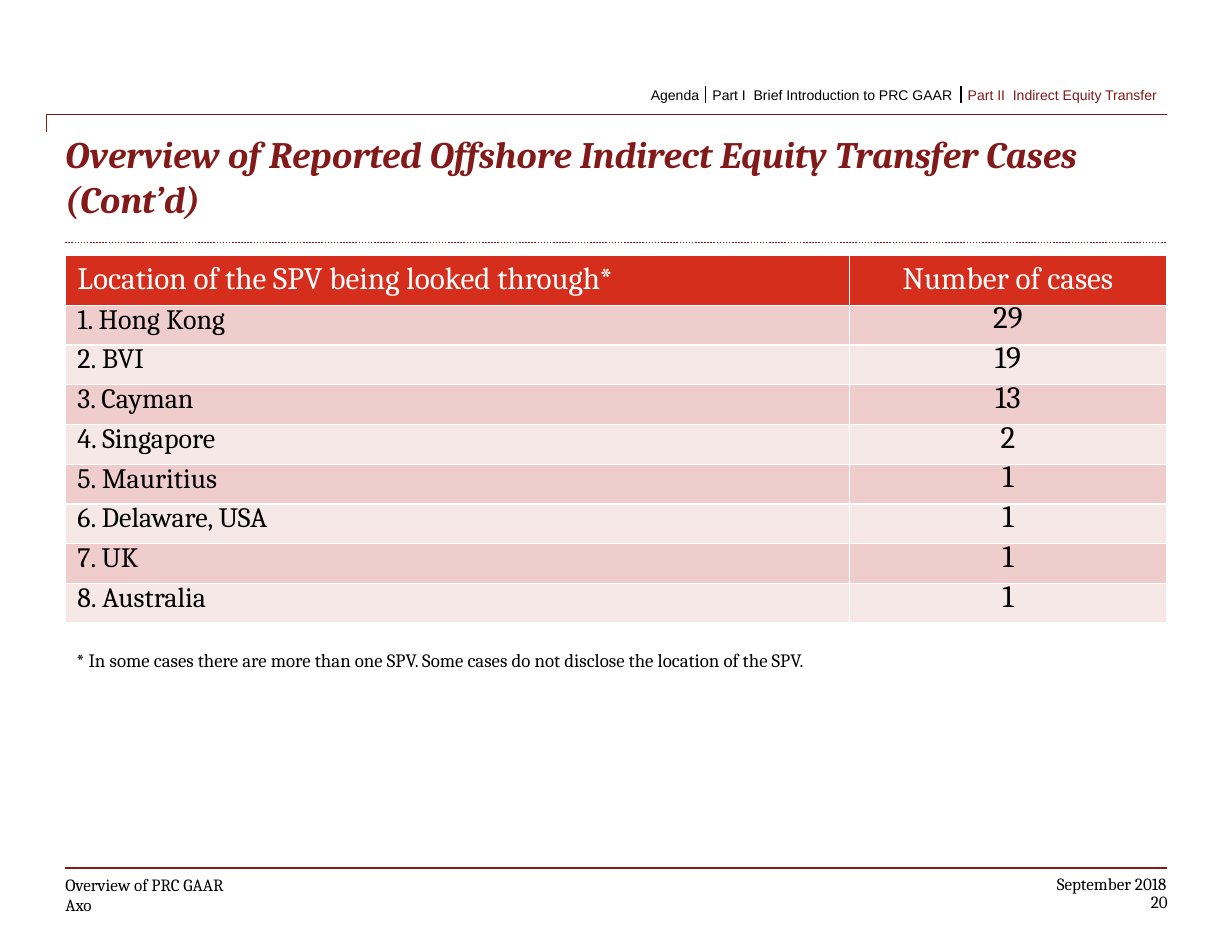
from pptx import Presentation
from pptx.dml.color import RGBColor
from pptx.enum.dml import MSO_LINE
from pptx.enum.shapes import MSO_CONNECTOR
from pptx.enum.text import MSO_ANCHOR as ANCHOR, PP_ALIGN as ALIGN
from pptx.oxml import parse_xml
from pptx.oxml.ns import nsdecls
from pptx.util import Pt
from lxml.etree import SubElement
from pptx.oxml.ns import qn

MAROON = RGBColor(0x82, 0x1A, 0x1A)
RED = RGBColor(0xD6, 0x2E, 0x1C)
PINK = RGBColor(0xF0, 0xCD, 0xCD)
PALE = RGBColor(0xF7, 0xE8, 0xE8)
BLACK = RGBColor(0, 0, 0)
WHITE = RGBColor(0xFF, 0xFF, 0xFF)

# Content
TITLE = "Overview of Reported Offshore Indirect Equity Transfer Cases (Cont’d)"
HEADER = ("Location of the SPV being looked through*", "Number of cases")
CASES = [
    ("1. Hong Kong", 29),
    ("2. BVI", 19),
    ("3. Cayman", 13),
    ("4. Singapore", 2),
    ("5. Mauritius", 1),
    ("6. Delaware, USA", 1),
    ("7. UK", 1),
    ("8. Australia", 1),
]
FOOTNOTE = ("* In some cases there are more than one SPV. "
            "Some cases do not disclose the location of the SPV.")
# Navigation: text, left, width, colour
NAV = [
    ("Agenda", 416.2, 36, BLACK),
    ("Part I  Brief Introduction to PRC GAAR", 455.8, 160, BLACK),
    ("Part II  Indirect Equity Transfer", 619.9, 130.3, MAROON),
]
# Footer: text, left, top, width, height, format
FOOTER = [
    ("Overview of PRC GAAR", 42, 561.6, 228, 13.7, dict(anchor=ANCHOR.BOTTOM)),
    ("Axo", 42, 578.2, 22, 10, dict(spacing=10, wrap=False)),
    ("September 2018", 670, 561.6, 80, 13.7, dict(align=ALIGN.RIGHT, wrap=False)),
    ("20", 725.8, 576, 25, 12.2, dict(align=ALIGN.RIGHT, spacing=10, wrap=False)),
]
LEFT, RIGHT = 42, 750
NAV_TOP, NAV_H = 55.4, 10.8


def write(tf, text, size=11, font="Cambria", color=BLACK, bold=False, italic=False,
          align=ALIGN.LEFT, spacing=None):
    p = tf.paragraphs[0]
    p.alignment = align
    if spacing:
        p.line_spacing = Pt(spacing)
    r = p.add_run()
    r.text = text
    r.font.size, r.font.name = Pt(size), font
    r.font.bold, r.font.italic = bold, italic
    r.font.color.rgb = color


def add_text(s, text, x, y, w, h, inset=(0, 0), wrap=True, anchor=ANCHOR.TOP, **fmt):
    tf = s.shapes.add_textbox(Pt(x), Pt(y), Pt(w), Pt(h)).text_frame
    tf.word_wrap = wrap
    tf.vertical_anchor = anchor
    tf.margin_left = tf.margin_right = Pt(inset[0])
    tf.margin_top = tf.margin_bottom = Pt(inset[1])
    write(tf, text, **fmt)


def add_line(s, x1, y1, x2, y2, color, width=0.75, dash=None):
    line = s.shapes.add_connector(MSO_CONNECTOR.STRAIGHT, Pt(x1), Pt(y1), Pt(x2), Pt(y2))
    line.line.color.rgb = color
    line.line.width = Pt(width)
    if dash:
        line.line.dash_style = dash
    SubElement(line._element.spPr, qn("a:effectLst"))


def fill_cell(cell, text, fill, **fmt):
    cell.margin_left = cell.margin_right = Pt(7.8)
    cell.margin_top = cell.margin_bottom = Pt(4)
    write(cell.text_frame, text, **fmt)
    tc_pr = cell._tc.get_or_add_tcPr()
    for side in ("lnL", "lnR", "lnT", "lnB"):
        tc_pr.append(parse_xml(
            f'<a:{side} {nsdecls("a")} w="12700"><a:solidFill>'
            f'<a:srgbClr val="{WHITE}"/></a:solidFill></a:{side}>'))
    cell.fill.solid()
    cell.fill.fore_color.rgb = fill


def add_case_table(s):
    widths, header_h, row_h = (504, 204), 31.5, 25.55
    n = len(CASES)
    table = s.shapes.add_table(n + 1, 2, Pt(LEFT), Pt(164.2), Pt(sum(widths)),
                               Pt(header_h + n * row_h)).table
    for col, width in zip(table.columns, widths):
        col.width = Pt(width)
    for i, row in enumerate(table.rows):
        row.height = Pt(row_h if i else header_h)
    for j, (text, align) in enumerate(zip(HEADER, (ALIGN.LEFT, ALIGN.CENTER))):
        fill_cell(table.cell(0, j), text, RED, size=20, color=WHITE, align=align)
    for i, (place, count) in enumerate(CASES, 1):
        fill = PINK if i % 2 else PALE
        fill_cell(table.cell(i, 0), place, fill, size=18, spacing=16)
        number = table.cell(i, 1)
        fill_cell(number, str(count), fill, size=20, align=ALIGN.CENTER, spacing=15)
        number.vertical_anchor = ANCHOR.MIDDLE


def main():
    prs = Presentation()
    prs.slide_width, prs.slide_height = Pt(792), Pt(612)
    s = prs.slides.add_slide(prs.slide_layouts[6])

    # Rules and the header bracket
    add_line(s, LEFT, 558, RIGHT, 558, MAROON)
    add_line(s, LEFT, 156, RIGHT, 156, MAROON, 1, MSO_LINE.ROUND_DOT)
    pen = s.shapes.build_freeform(Pt(30), Pt(85), scale=1.0)
    pen.add_line_segments([(Pt(30), Pt(73.5)), (Pt(RIGHT), Pt(73.5))], close=False)
    bracket = pen.convert_to_shape()
    bracket.fill.background()
    bracket.line.color.rgb = MAROON
    bracket.line.width = Pt(0.75)
    bracket.shadow.inherit = False

    # Navigation, with a divider before every part but the first
    for i, (text, x, w, color) in enumerate(NAV):
        add_text(s, text, x, NAV_TOP, w, NAV_H, inset=(2.2, 0), wrap=False,
                 size=9, font="Arial", color=color)
        if i:
            add_line(s, x - 2.2, NAV_TOP, x - 2.2, NAV_TOP + NAV_H, BLACK, 1)

    # Title, table and footnote
    add_text(s, TITLE, LEFT, 84.2, RIGHT - LEFT, 66.2, size=24, color=MAROON,
             bold=True, italic=True)
    add_case_table(s)
    add_text(s, FOOTNOTE, LEFT, 413.3, 680, 21.6, inset=(7.2, 3.6), size=12.1)

    # Footer
    for text, x, y, w, h, fmt in FOOTER:
        add_text(s, text, x, y, w, h, **fmt)

    prs.save("out.pptx")


if __name__ == "__main__":
    main()
